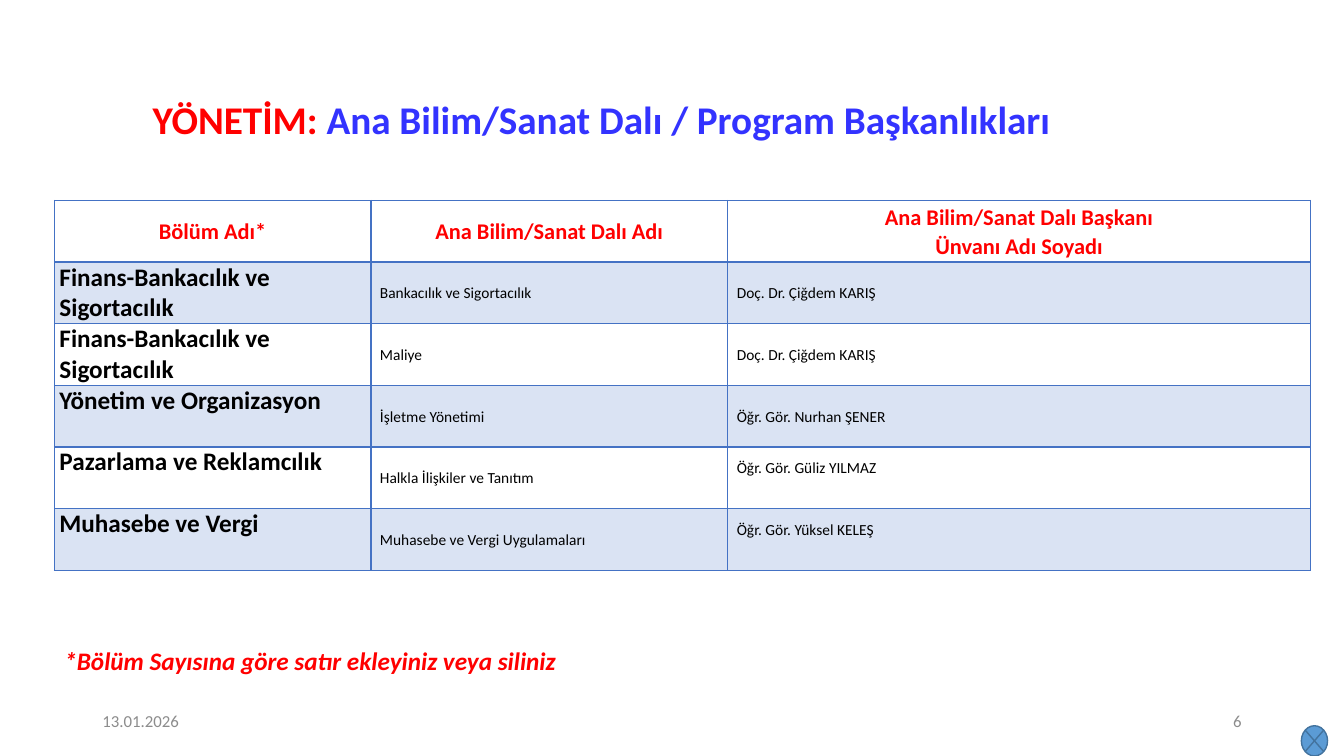
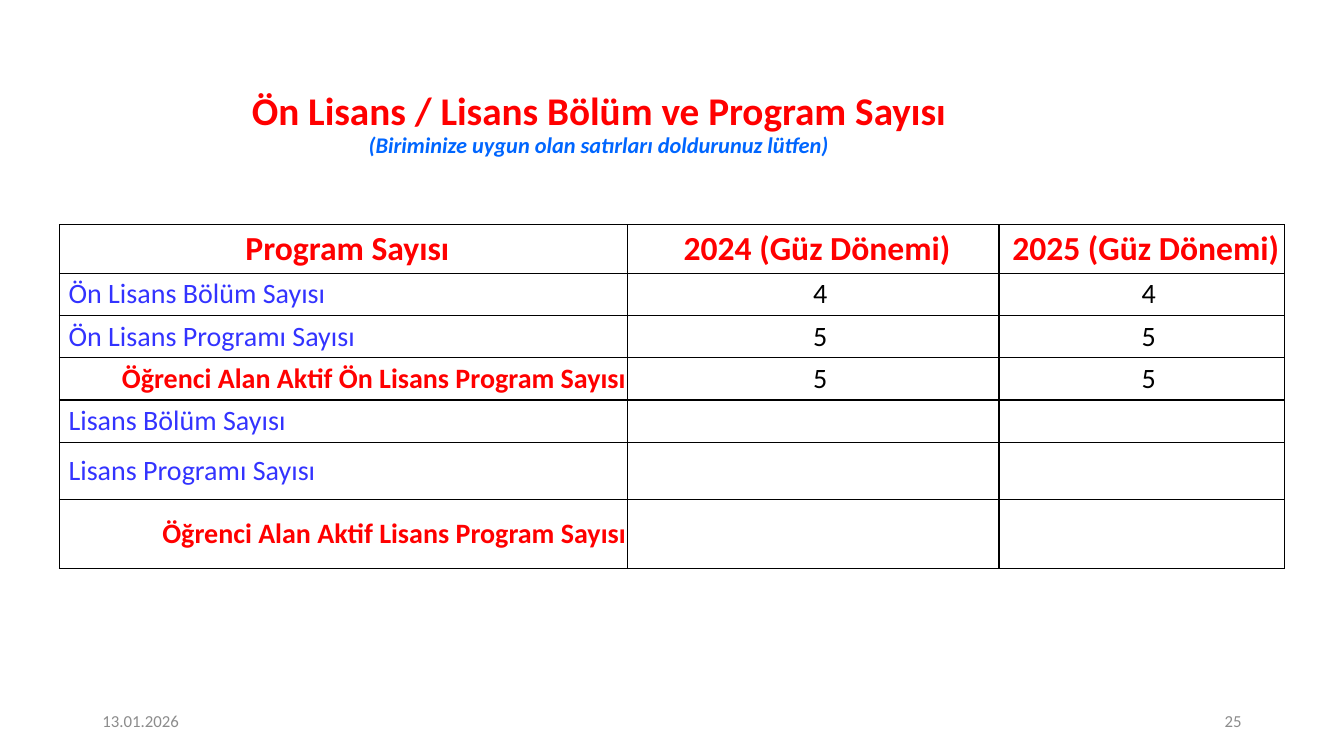
from lxml.etree import SubElement
from pptx import Presentation
from pptx.dml.color import RGBColor
from pptx.enum.shapes import MSO_SHAPE
from pptx.enum.text import MSO_ANCHOR, MSO_AUTO_SIZE, PP_ALIGN
from pptx.oxml.ns import qn
from pptx.util import Inches, Pt

RED = RGBColor(0xFF, 0x00, 0x00)
BLUE = RGBColor(0x33, 0x33, 0xFF)
BRIGHT_BLUE = RGBColor(0x00, 0x66, 0xFF)
BLACK = RGBColor(0x00, 0x00, 0x00)
WHITE = RGBColor(0xFF, 0xFF, 0xFF)
GREY = RGBColor(0x8C, 0x8C, 0x8C)
BAND = RGBColor(0xDA, 0xE3, 0xF3)
TABLE_BLUE = RGBColor(0x44, 0x72, 0xC4)
ICON_FILL = RGBColor(0x5B, 0x9B, 0xD5)
ICON_LINE = RGBColor(0x43, 0x73, 0x9E)

LEFT, CENTER, RIGHT = PP_ALIGN.LEFT, PP_ALIGN.CENTER, PP_ALIGN.RIGHT
TOP, MIDDLE = MSO_ANCHOR.TOP, MSO_ANCHOR.MIDDLE

TITLE_RED = {"size": Pt(28), "bold": True, "color": RED}
TITLE_BLUE = TITLE_RED | {"color": BLUE}
SUBTITLE = {"size": Pt(16), "bold": True, "italic": True, "color": BRIGHT_BLUE}
NOTE = {"size": Pt(18), "bold": True, "italic": True, "color": RED}
FOOTER = {"size": Pt(12), "color": GREY}
HEADING = {"size": Pt(16), "bold": True, "color": RED}
DEPARTMENT = {"size": Pt(18), "bold": True, "color": BLACK}
DETAIL = {"size": Pt(11), "bold": False, "color": BLACK}
COUNT_HEADING = {"size": Pt(24), "bold": True, "color": RED}
COUNT_LABEL = {"size": Pt(20), "bold": False, "color": BLUE}
ACTIVE_LABEL = {"size": Pt(20), "bold": True, "color": RED}
COUNT = {"size": Pt(20), "bold": False, "color": BLACK}

presentation = Presentation()
presentation.slide_width = Inches(13.33)
presentation.slide_height = Inches(7.5)
COLUMN = presentation.slide_width / 100
ROW = presentation.slide_height / 100


def write(text_frame, lines, alignment=LEFT, spacing=1.0):
    for index, pieces in enumerate(lines):
        paragraph = text_frame.add_paragraph() if index else text_frame.paragraphs[0]
        paragraph.alignment = alignment
        paragraph.line_spacing = spacing
        for text, style in pieces:
            run = paragraph.add_run()
            run.text = text
            run.font.name = "Calibri"
            for name, value in style.items():
                if name == "color":
                    run.font.color.rgb = value
                else:
                    setattr(run.font, name, value)


def add_grid(slide, left, top, widths, heights, line_color, heading_line):
    table = slide.shapes.add_table(
        len(heights), len(widths), int(left * COLUMN), int(top * ROW),
        int(sum(widths) * COLUMN), int(sum(heights) * ROW)).table
    table.first_row = False
    table.horz_banding = False
    for column, width in zip(table.columns, widths):
        column.width = int(width * COLUMN)
    for index, (row, height) in enumerate(zip(table.rows, heights)):
        row.height = int(height * ROW)
        for cell in row.cells:
            cell.vertical_anchor = MIDDLE
            cell.margin_top = cell.margin_bottom = 0
            properties = cell._tc.get_or_add_tcPr()
            line_widths = {"a:lnL": 1, "a:lnR": 1,
                           "a:lnT": heading_line if index == 1 else 1,
                           "a:lnB": heading_line if index == 0 else 1}
            for tag, width in line_widths.items():
                line = SubElement(properties, qn(tag), w=str(Pt(width)))
                fill = SubElement(line, qn("a:solidFill"))
                SubElement(fill, qn("a:srgbClr"), val=str(line_color))
            cell.fill.solid()
            cell.fill.fore_color.rgb = WHITE
    return table


pages = [
    {"number": "6", "box": (0.83, 11.6, 87.83, 9.07),
     "title": [[("YÖNETİM: ", TITLE_RED),
                ("Ana Bilim/Sanat Dalı / Program Başkanlıkları", TITLE_BLUE)]]},
    {"number": "25", "box": (1.05, 11.2, 87, 10.67),
     "title": [[("Ön Lisans / Lisans Bölüm ve Program Sayısı", TITLE_RED)],
               [("(Biriminize uygun olan satırları doldurunuz lütfen)", SUBTITLE)]]},
]
FOOTER_LEFT, FOOTER_WIDTH = 6.88, 22.5
FOOTER_RIGHT = 100 - FOOTER_LEFT - FOOTER_WIDTH

for page in pages:
    slide = presentation.slides.add_slide(presentation.slide_layouts[5])
    title = slide.shapes.title
    left, top, width, height = page["box"]
    title.left, title.width = int(left * COLUMN), int(width * COLUMN)
    title.top, title.height = int(top * ROW), int(height * ROW)
    title.text_frame.auto_size = MSO_AUTO_SIZE.NONE
    title.text_frame.vertical_anchor = MIDDLE
    write(title.text_frame, page["title"], CENTER, 0.9)
    for left, text, alignment in ((FOOTER_LEFT, "13.01.2026", LEFT),
                                  (FOOTER_RIGHT, page["number"], RIGHT)):
        footer = slide.shapes.add_textbox(
            int(left * COLUMN), int(92.67 * ROW),
            int(FOOTER_WIDTH * COLUMN), int(5.33 * ROW)).text_frame
        footer.word_wrap = True
        footer.vertical_anchor = MIDDLE
        write(footer, [[(text, FOOTER)]], alignment)

management_slide, program_slide = presentation.slides

icon = management_slide.shapes.add_shape(
    MSO_SHAPE.FLOWCHART_SUMMING_JUNCTION,
    int(96.83 * COLUMN), int(96 * ROW), int(1.95 * COLUMN), int(4 * ROW))
icon.shadow.inherit = False
icon.fill.solid()
icon.fill.fore_color.rgb = ICON_FILL
icon.line.color.rgb = ICON_LINE
icon.line.width = Pt(1)

headings = [["Bölüm Adı*"], ["Ana Bilim/Sanat Dalı Adı"],
            ["Ana Bilim/Sanat Dalı Başkanı", "Ünvanı Adı Soyadı"]]
departments = [
    ("Finans-Bankacılık ve Sigortacılık", "Bankacılık ve Sigortacılık", "Doç. Dr. Çiğdem KARIŞ"),
    ("Finans-Bankacılık ve Sigortacılık", "Maliye", "Doç. Dr. Çiğdem KARIŞ"),
    ("Yönetim ve Organizasyon", "İşletme Yönetimi", "Öğr. Gör. Nurhan ŞENER"),
    ("Pazarlama ve Reklamcılık", "Halkla İlişkiler ve Tanıtım", "Öğr. Gör. Güliz YILMAZ"),
    ("Muhasebe ve Vergi", "Muhasebe ve Vergi Uygulamaları", "Öğr. Gör. Yüksel KELEŞ"),
]
table = add_grid(management_slide, 4.05, 26.53, [23.55, 26.55, 43.35],
                 [8.15] * (len(departments) + 1), TABLE_BLUE, 2)
for column, lines in enumerate(headings):
    cell = table.cell(0, column)
    cell.margin_left = cell.margin_right = Inches(0.05)
    write(cell.text_frame, [[(line, HEADING)] for line in lines], CENTER, 1.07)
for row, texts in enumerate(departments, start=1):
    for column, text in enumerate(texts):
        cell = table.cell(row, column)
        cell.margin_left = Inches(0.09 if column else 0.05)
        cell.margin_right = Inches(0.05)
        if row % 2:
            cell.fill.fore_color.rgb = BAND
        if column == 0:
            cell.vertical_anchor = TOP
        if column == 2 and row > 3:
            cell.margin_bottom = Inches(0.2)
        write(cell.text_frame, [[(text, DETAIL if column else DEPARTMENT)]],
              spacing=1.07 if column else 1.0)

note = management_slide.shapes.add_textbox(
    int(4.05 * COLUMN), int(84.67 * ROW), int(38.55 * COLUMN), int(5.33 * ROW)).text_frame
note.word_wrap = False
note.auto_size = MSO_AUTO_SIZE.SHAPE_TO_FIT_TEXT
write(note, [[("*Bölüm Sayısına göre satır ekleyiniz veya siliniz", NOTE)]])

counts = [
    ("Program Sayısı", "2024 (Güz Dönemi)", "2025 (Güz Dönemi)"),
    ("Ön Lisans Bölüm Sayısı", "4", "4"),
    ("Ön Lisans Programı Sayısı", "5", "5"),
    ("Öğrenci Alan Aktif Ön Lisans Program Sayısı", "5", "5"),
    ("Lisans Bölüm Sayısı", "", ""),
    ("Lisans Programı Sayısı", "", ""),
    ("Öğrenci Alan Aktif Lisans Program Sayısı", "", ""),
]
table = add_grid(program_slide, 4.43, 29.73, [42.23, 27.68, 21.23],
                 [6.4] + [5.6] * 4 + [7.6, 9.07], BLACK, 1)
for row, texts in enumerate(counts):
    for column, text in enumerate(texts):
        cell = table.cell(row, column)
        cell.margin_left = Inches(0.15 if row and column else 0.09)
        cell.margin_right = Inches(0.01)
        if row == 0:
            style, alignment = COUNT_HEADING, CENTER
        elif column:
            style, alignment = COUNT, CENTER
        elif row % 3 == 0:
            style, alignment = ACTIVE_LABEL, RIGHT
        else:
            style, alignment = COUNT_LABEL, LEFT
        if text:
            write(cell.text_frame, [[(text, style)]], alignment)

presentation.save("out.pptx")
